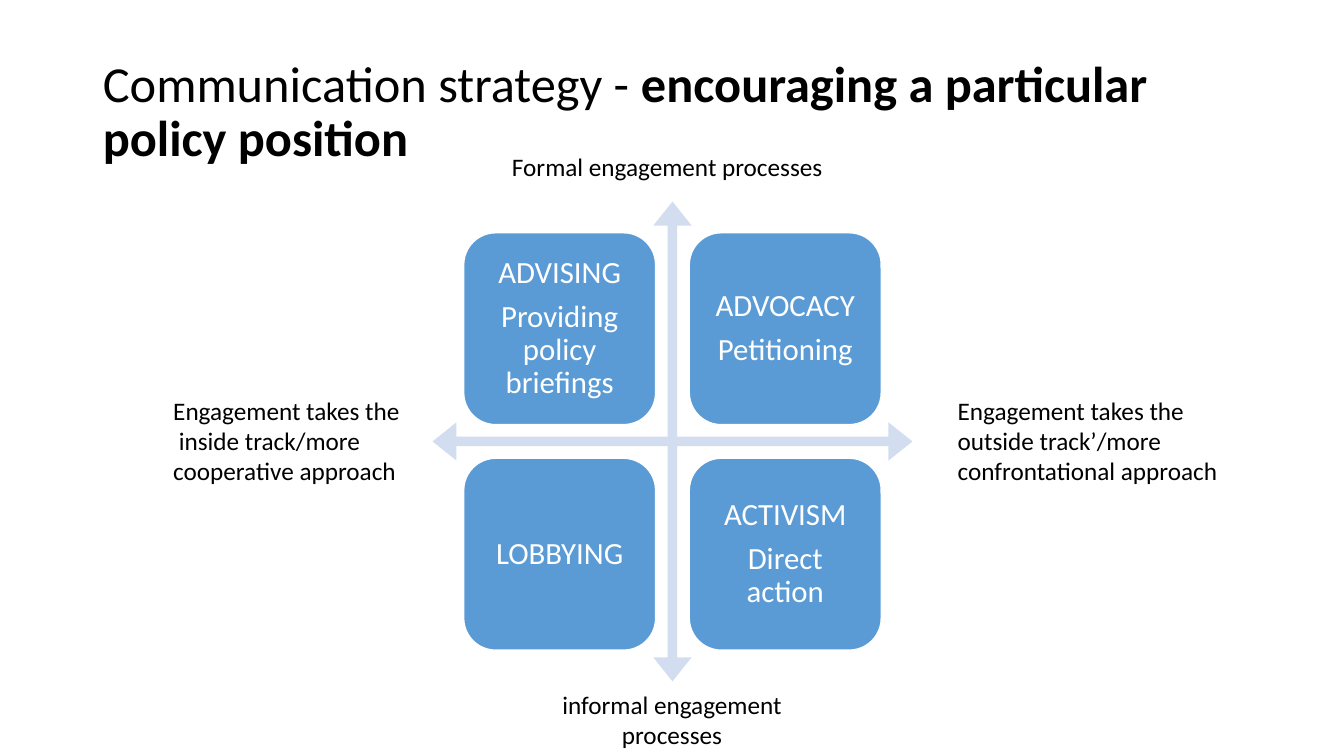
from pptx import Presentation
from pptx.dml.color import RGBColor
from pptx.enum.shapes import MSO_SHAPE
from pptx.enum.text import MSO_ANCHOR, MSO_AUTO_SIZE, PP_ALIGN
from pptx.util import Inches, Pt

QUAD_ARROW, ROUNDED = MSO_SHAPE.QUAD_ARROW, MSO_SHAPE.ROUNDED_RECTANGLE
TOP, MIDDLE = MSO_ANCHOR.TOP, MSO_ANCHOR.MIDDLE
LEFT, CENTER = PP_ALIGN.LEFT, PP_ALIGN.CENTER
NO_FIT = MSO_AUTO_SIZE.NONE

BLACK = RGBColor(0x00, 0x00, 0x00)
WHITE = RGBColor(0xFF, 0xFF, 0xFF)
BLUE = RGBColor(0x5B, 0x9B, 0xD5)
PALE_BLUE = RGBColor(0xD2, 0xDE, 0xEF)

FONT = "Calibri"
TITLE_FONT = {"name": FONT, "size": Pt(36)}
QUADRANT_FONT = {"name": FONT, "size": Pt(22)}
LABEL_FONT = {"name": FONT, "size": Pt(18)}
TITLE_PARAGRAPH = {"alignment": LEFT, "line_spacing": 0.9}
QUADRANT_PARAGRAPH = {"alignment": CENTER, "line_spacing": 0.9, "space_after": Pt(7.7)}
QUADRANT_FRAME = {"word_wrap": True, "vertical_anchor": MIDDLE}
QUADRANT_FRAME.update({f"margin_{side}": Inches(0.09)
                       for side in ("left", "top", "right", "bottom")})

TITLE_BOX = (0.92, 0.4, 11.5, 1.45)
MATRIX_BOX = (4.29, 2, 4.76, 4.76)

# Rows of the matrix, each with its two quadrants
QUADRANTS = [
    [["ADVISING", "Providing policy briefings"], ["ADVOCACY", "Petitioning"]],
    [["LOBBYING"], ["ACTIVISM", "Direct action"]],
]
# Box, alignment and paragraphs of the label at each end of the axes
AXIS_LABELS = [
    ((4.98, 1.45, 3.37, 0.4), LEFT, ["Formal engagement processes"]),
    ((4.72, 6.79, 3.89, 0.71), CENTER, ["informal engagement", "processes"]),
    ((1.62, 3.87, 2.46, 1.01), LEFT,
     ["Engagement takes the\v inside track/more cooperative approach"]),
    ((9.4, 3.87, 2.86, 1.01), LEFT,
     ["Engagement takes the outside track’/more confrontational approach"]),
]


def apply_format(target, values):
    for attribute, value in values.items():
        setattr(target, attribute, value)


def write_paragraphs(frame, texts, paragraph_format, font_format, color):
    frame.text = "\n".join(texts)
    for paragraph in frame.paragraphs:
        apply_format(paragraph, paragraph_format)
        for run in paragraph.runs:
            apply_format(run.font, font_format)
            run.font.color.rgb = color


def add_filled_shape(slide, preset, box, color):
    shape = slide.shapes.add_shape(preset, *map(Inches, box))
    shape.shadow.inherit = False
    shape.fill.solid()
    shape.fill.fore_color.rgb = color
    return shape


def place_title(slide, box):
    title = slide.shapes.title
    apply_format(title, dict(zip(("left", "top", "width", "height"), map(Inches, box))))
    frame = title.text_frame
    apply_format(frame, {"word_wrap": True, "vertical_anchor": MIDDLE, "auto_size": NO_FIT})
    heading = frame.paragraphs[0]
    apply_format(heading, TITLE_PARAGRAPH)
    for text, bold in (("Communication strategy - ", False),
                       ("encouraging a particular policy position", True)):
        run = heading.add_run()
        run.text = text
        apply_format(run.font, {**TITLE_FONT, "bold": bold})
        run.font.color.rgb = BLACK


def add_matrix(slide, box):
    left, top, width, height = box
    # Crossed axes
    axes = add_filled_shape(slide, QUAD_ARROW, box, PALE_BLUE)
    axes.line.fill.background()
    for index, share in enumerate((0.02, 0.04, 0.05)):
        axes.adjustments[index] = share

    # Quadrants: 40 % of the box each, with a 6.5 % margin and a 47 % pitch
    size, margin, pitch = 0.4, 0.065, 0.47
    for row, quadrants in enumerate(QUADRANTS):
        for column, texts in enumerate(quadrants):
            quadrant_box = (left + width * (margin + column * pitch),
                            top + height * (margin + row * pitch),
                            width * size, height * size)
            quadrant = add_filled_shape(slide, ROUNDED, quadrant_box, BLUE)
            quadrant.line.color.rgb = WHITE
            quadrant.line.width = Pt(1)
            apply_format(quadrant.text_frame, QUADRANT_FRAME)
            write_paragraphs(quadrant.text_frame, texts, QUADRANT_PARAGRAPH,
                             QUADRANT_FONT, WHITE)


def add_axis_label(slide, box, alignment, texts):
    frame = slide.shapes.add_textbox(*map(Inches, box)).text_frame
    apply_format(frame, {"word_wrap": True, "vertical_anchor": TOP})
    write_paragraphs(frame, texts, {"alignment": alignment}, LABEL_FONT, BLACK)


def main():
    deck = Presentation()
    deck.slide_width, deck.slide_height = Inches(13.33), Inches(7.5)
    slide = deck.slides.add_slide(deck.slide_layouts.get_by_name("Title Only"))
    place_title(slide, TITLE_BOX)
    add_matrix(slide, MATRIX_BOX)
    for box, alignment, texts in AXIS_LABELS:
        add_axis_label(slide, box, alignment, texts)
    deck.save("out.pptx")


if __name__ == "__main__":
    main()
